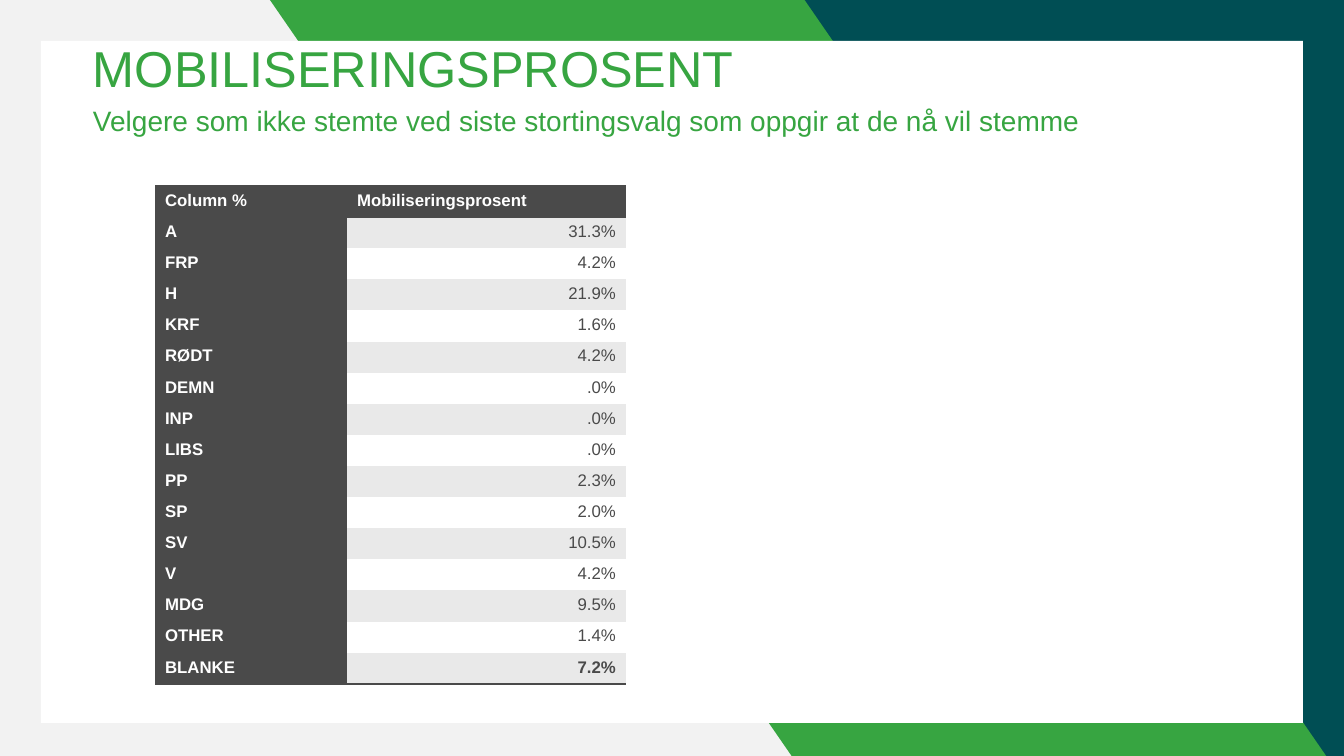
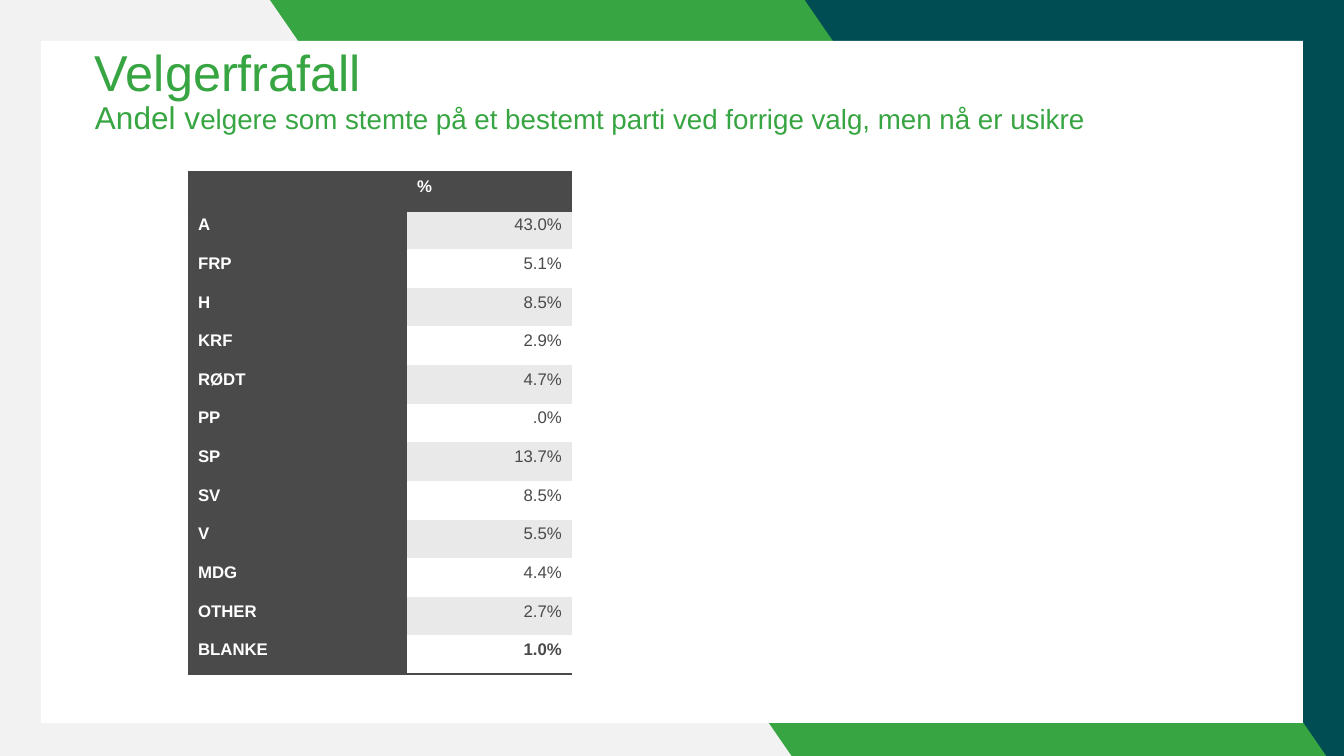
from lxml.etree import SubElement
from pptx import Presentation
from pptx.dml.color import RGBColor
from pptx.enum.shapes import MSO_SHAPE as Preset
from pptx.enum.text import MSO_ANCHOR as Anchor, PP_ALIGN as Align
from pptx.oxml.ns import qn
from pptx.util import Pt

PX = 914400 / 100.8
FONT = "Arial"
PLAIN_TABLE = "{2D5ABB26-0587-4C30-8999-92F81FD0307C}"
COLORS = {
    "pale": "F2F2F2",
    "petrol": "004E54",
    "green": "37A541",
    "white": "FFFFFF",
    "dark": "4A4A4A",
    "band": "E9E9E9",
}

# preset, left, top, width, height, colour
BACKDROP = [
    (Preset.RECTANGLE, 0, 0, 1344, 760, "pale"),
    (Preset.RECTANGLE, 800, 0, 544, 760, "petrol"),
    (Preset.PARALLELOGRAM, 270, 0, 1059, 760, "green"),
    (Preset.RECTANGLE, 41, 41, 1262, 682, "white"),
]
SLANT = 0.69

# A heading is a list of lines; a line is a list of (text, size) runs.
SLIDES = [
    {
        "heading": [
            [("MOBILISERINGSPROSENT", 36)],
            [("Velgere som ikke stemte ved siste stortingsvalg som oppgir at de nå vil stemme", 20)],
        ],
        "heading_box": (93, 40, 1159, 146),
        "anchor": Anchor.TOP,
        "space_after": 6,
        "table_at": (155, 186),
        "columns": (192, 279),
        "table_height": 498,
        "rows": [
            ("Column %", "Mobiliseringsprosent"),
            ("A", "31.3%"),
            ("FRP", "4.2%"),
            ("H", "21.9%"),
            ("KRF", "1.6%"),
            ("RØDT", "4.2%"),
            ("DEMN", ".0%"),
            ("INP", ".0%"),
            ("LIBS", ".0%"),
            ("PP", "2.3%"),
            ("SP", "2.0%"),
            ("SV", "10.5%"),
            ("V", "4.2%"),
            ("MDG", "9.5%"),
            ("OTHER", "1.4%"),
            ("BLANKE", "7.2%"),
        ],
    },
    {
        "heading": [
            [("Velgerfrafall", 36)],
            [("Andel v", 22.5),
             ("elgere som stemte på et bestemt parti ved forrige valg, men nå er usikre", 19.8)],
        ],
        "heading_box": (95, 56, 1056, 84),
        "anchor": Anchor.BOTTOM,
        "space_after": 0,
        "table_at": (188, 172),
        "columns": (219, 165),
        "table_height": 502,
        "rows": [
            ("", "%"),
            ("A", "43.0%"),
            ("FRP", "5.1%"),
            ("H", "8.5%"),
            ("KRF", "2.9%"),
            ("RØDT", "4.7%"),
            ("PP", ".0%"),
            ("SP", "13.7%"),
            ("SV", "8.5%"),
            ("V", "5.5%"),
            ("MDG", "4.4%"),
            ("OTHER", "2.7%"),
            ("BLANKE", "1.0%"),
        ],
    },
]


def px(*lengths):
    return [round(length * PX) for length in lengths]


def color(name):
    return RGBColor.from_string(COLORS[name])


def paint(target, name):
    target.fill.solid()
    target.fill.fore_color.rgb = color(name)


def move_backdrop_to_layout(slide):
    """Draw the bands on a slide, then hand them to its layout for all slides."""
    layout = slide.slide_layout
    for placeholder in list(layout.placeholders):
        layout.shapes.element.remove(placeholder.element)
    for preset, *place, name in BACKDROP:
        shape = slide.shapes.add_shape(preset, *px(*place))
        paint(shape, name)
        shape.line.fill.background()
        shape.shadow.inherit = False
        if preset == Preset.PARALLELOGRAM:
            shape.adjustments[0] = SLANT
            shape.element.spPr.find(qn("a:xfrm")).set("flipH", "1")
        layout.shapes.element.append(shape.element)


def add_heading(slide, content):
    box = slide.shapes.add_textbox(*px(*content["heading_box"]))
    frame = box.text_frame
    frame.word_wrap = True
    frame.vertical_anchor = content["anchor"]
    frame.margin_left = frame.margin_right = 0
    frame.margin_top = frame.margin_bottom = px(4)[0]
    for index, line in enumerate(content["heading"]):
        para = frame.add_paragraph() if index else frame.paragraphs[0]
        para.line_spacing = 0.9
        para.space_after = Pt(content["space_after"])
        para.font.name = FONT
        para.font.color.rgb = color("green")
        for text, size in line:
            span = para.add_run()
            span.text = text
            span.font.size = Pt(size)


def add_border(cell, side):
    """Rule one side of a cell; borders must be set before the fill."""
    properties = cell._tc.get_or_add_tcPr()
    line = SubElement(properties, qn(f"a:ln{side}"), w=str(Pt(2)))
    fill = SubElement(line, qn("a:solidFill"))
    SubElement(fill, qn("a:srgbClr"), val=COLORS["dark"])


def add_result_table(slide, content):
    rows, columns = content["rows"], content["columns"]
    place = px(*content["table_at"], sum(columns), content["table_height"])
    graphic = slide.shapes.add_table(len(rows), len(columns), *place)
    next(graphic.element.iter(qn("a:tableStyleId"))).text = PLAIN_TABLE
    table = graphic.table
    table.horz_banding = False
    for column, width in zip(table.columns, px(*columns)):
        column.width = width
    last = len(rows) - 1
    for r, values in enumerate(rows):
        table.rows[r].height = px(content["table_height"] / len(rows))[0]
        for c, value in enumerate(values):
            cell = table.cell(r, c)
            is_label = r == 0 or c == 0
            if r == 0:
                add_border(cell, "T")
            if r in (0, last):
                add_border(cell, "B")
            paint(cell, "dark" if is_label else "band" if r % 2 else "white")
            cell.text = value
            para = cell.text_frame.paragraphs[0]
            para.alignment = Align.LEFT if is_label else Align.RIGHT
            para.font.name = FONT
            para.font.size = Pt(12)
            para.font.bold = is_label or r == last
            para.font.color.rgb = color("white" if is_label else "dark")


def main():
    deck = Presentation()
    deck.slide_width, deck.slide_height = px(1344, 756)
    blank = deck.slide_layouts[6]
    for index, content in enumerate(SLIDES):
        slide = deck.slides.add_slide(blank)
        if index == 0:
            move_backdrop_to_layout(slide)
        add_heading(slide, content)
        add_result_table(slide, content)
    deck.save("out.pptx")


if __name__ == "__main__":
    main()
